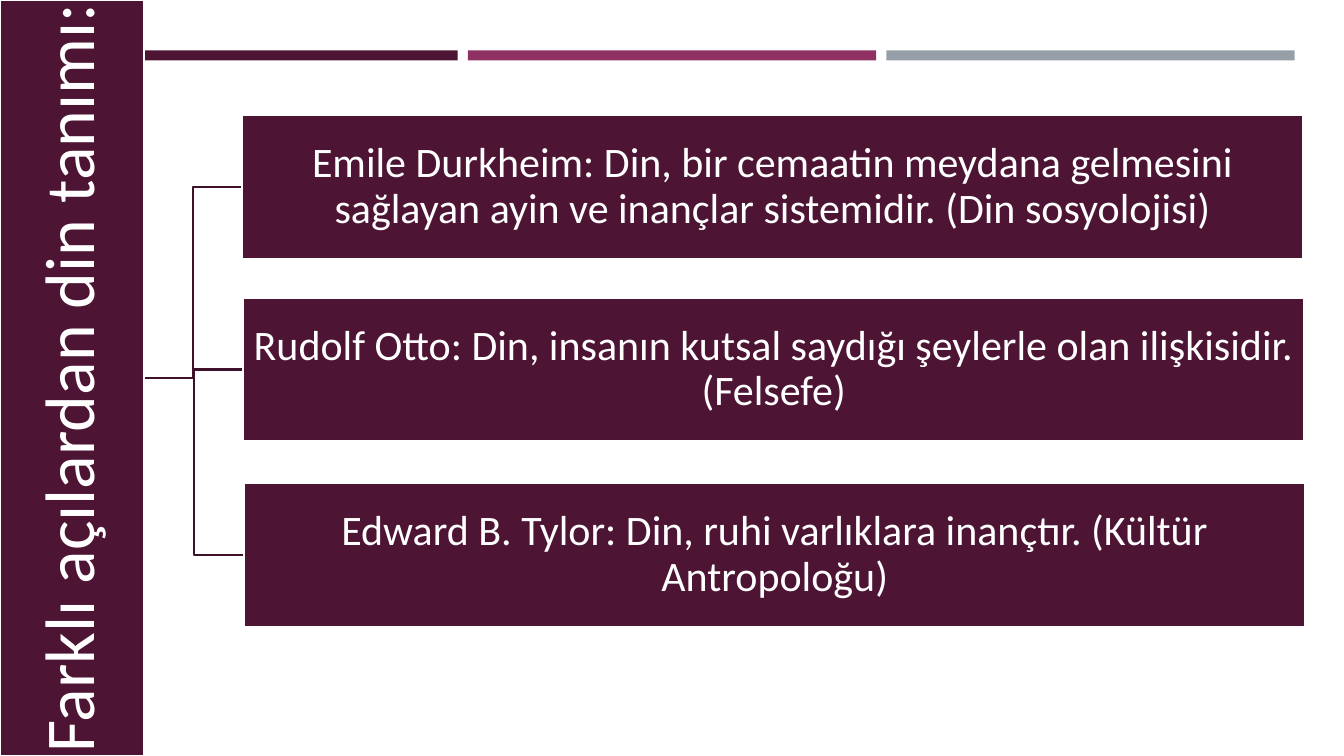
from pptx import Presentation
from pptx.dml.color import RGBColor
from pptx.enum.shapes import MSO_SHAPE as Shape
from pptx.enum.text import MSO_ANCHOR as Anchor, PP_ALIGN as Align
from pptx.util import Inches, Pt

PLUM = RGBColor(0x4D, 0x14, 0x34)
DARK_PLUM = RGBColor(0x3E, 0x10, 0x2A)
BERRY = RGBColor(0x90, 0x31, 0x63)
GREY = RGBColor(0x96, 0x9F, 0xA7)
WHITE = RGBColor(0xFF, 0xFF, 0xFF)

PAGE_WIDTH, PAGE_HEIGHT = 13.33, 7.5
BAND = 1.43  # width of the title strip and height of each definition
TITLE = "Farklı açılardan din tanımı:"
DEFINITIONS = [
    (2.40, 1.14, "Emile Durkheim: Din, bir cemaatin meydana gelmesini sağlayan "
                 "ayin ve inançlar sistemidir. (Din sosyolojisi)"),
    (2.41, 2.95, "Rudolf Otto: Din, insanın kutsal saydığı şeylerle olan "
                 "ilişkisidir. (Felsefe)"),
    (2.42, 4.79, "Edward B. Tylor: Din, ruhi varlıklara inançtır. "
                 "(Kültür Antropoloğu)"),
]


def add_rectangle(page, left, top, width, height, fill):
    box = page.shapes.add_shape(Shape.RECTANGLE, Inches(left), Inches(top),
                                Inches(width), Inches(height))
    box.shadow.inherit = False
    box.fill.solid()
    box.fill.fore_color.rgb = fill
    box.line.fill.background()
    return box


def add_label(page, left, top, width, height, text, size, inset, wrap=True):
    """Add a plum rectangle with a white outline and centred text."""
    box = add_rectangle(page, left, top, width, height, PLUM)
    box.line.color.rgb = WHITE
    box.line.width = Pt(1.75)
    frame = box.text_frame
    frame_format = {"word_wrap": wrap, "vertical_anchor": Anchor.MIDDLE}
    for side in ("left", "top", "right", "bottom"):
        frame_format[f"margin_{side}"] = Inches(inset)
    for name, value in frame_format.items():
        setattr(frame, name, value)
    para = frame.paragraphs[0]
    para.alignment = Align.CENTER
    para.line_spacing = 0.9
    span = para.add_run()
    span.text = text
    for name, value in {"name": "Calibri", "size": Pt(size)}.items():
        setattr(span.font, name, value)
    span.font.color.rgb = WHITE
    return box


def add_header_bars(page, left, top, width, height, gap=0.1):
    for index, color in enumerate((PLUM, BERRY, GREY)):
        add_rectangle(page, left + index * (width + gap), top, width, height, color)


def add_branch(page, start_x, start_y, end_x, end_y):
    """Draw an elbow line that turns halfway across."""
    middle_x = (start_x + end_x) / 2
    points = [(middle_x, start_y), (middle_x, end_y), (end_x, end_y)]
    builder = page.shapes.build_freeform(Inches(start_x), Inches(start_y))
    builder.add_line_segments([(Inches(x), Inches(y)) for x, y in points], close=False)
    branch = builder.convert_to_shape()
    branch.shadow.inherit = False
    branch.fill.background()
    branch.line.color.rgb = DARK_PLUM
    branch.line.width = Pt(1.75)


def add_side_title(page, left, top, width, height):
    """Add the title strip, turned to read from bottom to top."""
    box = add_label(page, left + (width - height) / 2, top + (height - width) / 2,
                    height, width, TITLE, 50, 0.03, wrap=False)
    box.rotation = 270


def add_definition_tree(page, left, top, width, height):
    for box_left, box_top, _ in reversed(DEFINITIONS):
        add_branch(page, left + width, top + height / 2, box_left, box_top + BAND / 2)
    add_side_title(page, left, top, width, height)
    for box_left, box_top, text in DEFINITIONS:
        add_label(page, box_left, box_top, 10.53, BAND, text, 30, 0.02)


def main():
    deck = Presentation()
    deck.slide_width, deck.slide_height = Inches(PAGE_WIDTH), Inches(PAGE_HEIGHT)
    page = deck.slides.add_slide(deck.slide_layouts[6])
    add_header_bars(page, 0.49, 0.5, 4.05, 0.1)
    add_definition_tree(page, 0, 0, BAND, PAGE_HEIGHT)
    deck.save("out.pptx")


if __name__ == "__main__":
    main()
